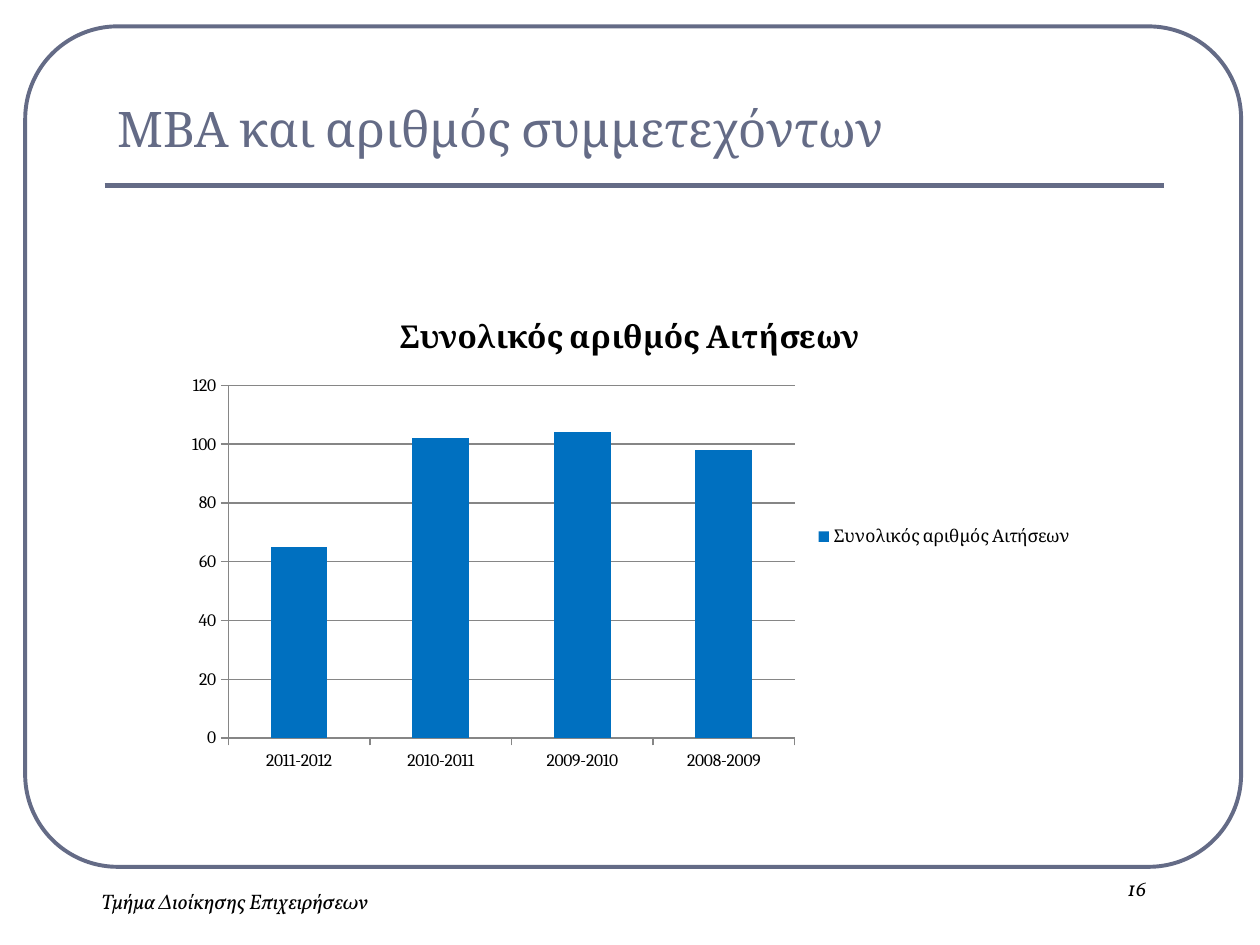
from lxml import etree
from pptx import Presentation
from pptx import util as u
from pptx.chart.data import CategoryChartData
from pptx.dml.color import RGBColor
from pptx.enum import chart as ch, shapes, text
from pptx.oxml.ns import qn

SLATE = RGBColor(0x64, 0x6B, 0x86)
BLUE = RGBColor(0x00, 0x70, 0xC0)
GRAY = RGBColor(0x86, 0x86, 0x86)
BLACK = RGBColor(0, 0, 0)
HEADING_FONT = "Cambria"
FOOTER_FONT = "Vollkorn"
CHART_TITLE = "Συνολικός αριθμός Αιτήσεων"


def box(*lengths):
    return [u.Inches(length) for length in lengths]


def format_font(font, size, name=HEADING_FONT, color=BLACK, bold=False, italic=False):
    font.size = u.Pt(size)
    font.name = name
    font.color.rgb = color
    font.bold = bold
    font.italic = italic


def write(frame, content, align=text.PP_ALIGN.LEFT, anchor=text.MSO_ANCHOR.TOP, **font):
    frame.word_wrap = True
    frame.vertical_anchor = anchor
    paragraph = frame.paragraphs[0]
    paragraph.alignment = align
    run = paragraph.add_run()
    run.text = content
    format_font(run.font, **font)


def style_line(line, width, color):
    line.width = u.Pt(width)
    line.color.rgb = color


def add_frame(slide):
    frame = slide.shapes.add_shape(
        shapes.MSO_SHAPE.ROUNDED_RECTANGLE, *box(0.2, 0.21, 9.65, 6.67))
    frame.adjustments[0] = 0.11
    frame.shadow.inherit = False
    frame.fill.background()
    style_line(frame.line, 2.25, SLATE)


def add_title_rule(slide):
    rule = slide.shapes.add_connector(
        shapes.MSO_CONNECTOR.STRAIGHT, *box(0.83, 1.47, 9.24, 1.47))
    style_line(rule.line, 3, SLATE)
    etree.SubElement(rule._element.spPr, qn("a:effectLst"))


def add_title(slide, content):
    title = slide.shapes.title
    title.left, title.top, title.width, title.height = box(0.83, 0.36, 8.42, 0.94)
    write(title.text_frame, content, anchor=text.MSO_ANCHOR.BOTTOM, size=28, color=SLATE)


def add_footer(slide, content, *place):
    footer = slide.shapes.add_textbox(*box(*place))
    write(footer.text_frame, content, align=text.PP_ALIGN.CENTER,
          size=12, name=FOOTER_FONT, italic=True)


def add_applications_chart(slide):
    data = CategoryChartData()
    data.categories = ["2011-2012", "2010-2011", "2009-2010", "2008-2009"]
    data.add_series(CHART_TITLE, [65, 102, 104, 98])
    chart = slide.shapes.add_chart(
        ch.XL_CHART_TYPE.COLUMN_CLUSTERED, *box(1.38, 2.33, 7.24, 3.86), data).chart
    format_font(chart.font, 10)

    # Title and legend
    chart.has_title = True
    write(chart.chart_title.text_frame, CHART_TITLE,
          align=text.PP_ALIGN.CENTER, size=18, bold=True)
    chart.chart_title.include_in_layout = False
    chart.has_legend = True
    chart.legend.position = ch.XL_LEGEND_POSITION.RIGHT
    chart.legend.include_in_layout = False

    # Columns
    plot = chart.plots[0]
    plot.gap_width = 150
    plot.vary_by_categories = False
    fill = plot.series[0].format.fill
    fill.solid()
    fill.fore_color.rgb = BLUE

    # Axes
    for axis in (chart.category_axis, chart.value_axis):
        axis.major_tick_mark = ch.XL_TICK_MARK.OUTSIDE
        axis.minor_tick_mark = ch.XL_TICK_MARK.NONE
        style_line(axis.format.line, 0.75, GRAY)
    chart.value_axis.minimum_scale = 0
    chart.value_axis.maximum_scale = 120
    chart.value_axis.major_unit = 20
    chart.value_axis.has_major_gridlines = True
    style_line(chart.value_axis.major_gridlines.format.line, 0.75, GRAY)


def main():
    presentation = Presentation()
    presentation.slide_width, presentation.slide_height = box(10, 7.5)
    slide = presentation.slides.add_slide(presentation.slide_layouts[5])

    # Background decoration
    add_frame(slide)
    add_title_rule(slide)

    # Content
    add_title(slide, "ΜΒΑ και αριθμός συμμετεχόντων")
    add_footer(slide, "Τμήμα Διοίκησης Επιχειρήσεων", 0.28, 7, 3.17, 0.5)
    add_footer(slide, "16", 8.15, 6.9, 1.75, 0.5)
    add_applications_chart(slide)
    presentation.save("out.pptx")


if __name__ == "__main__":
    main()
